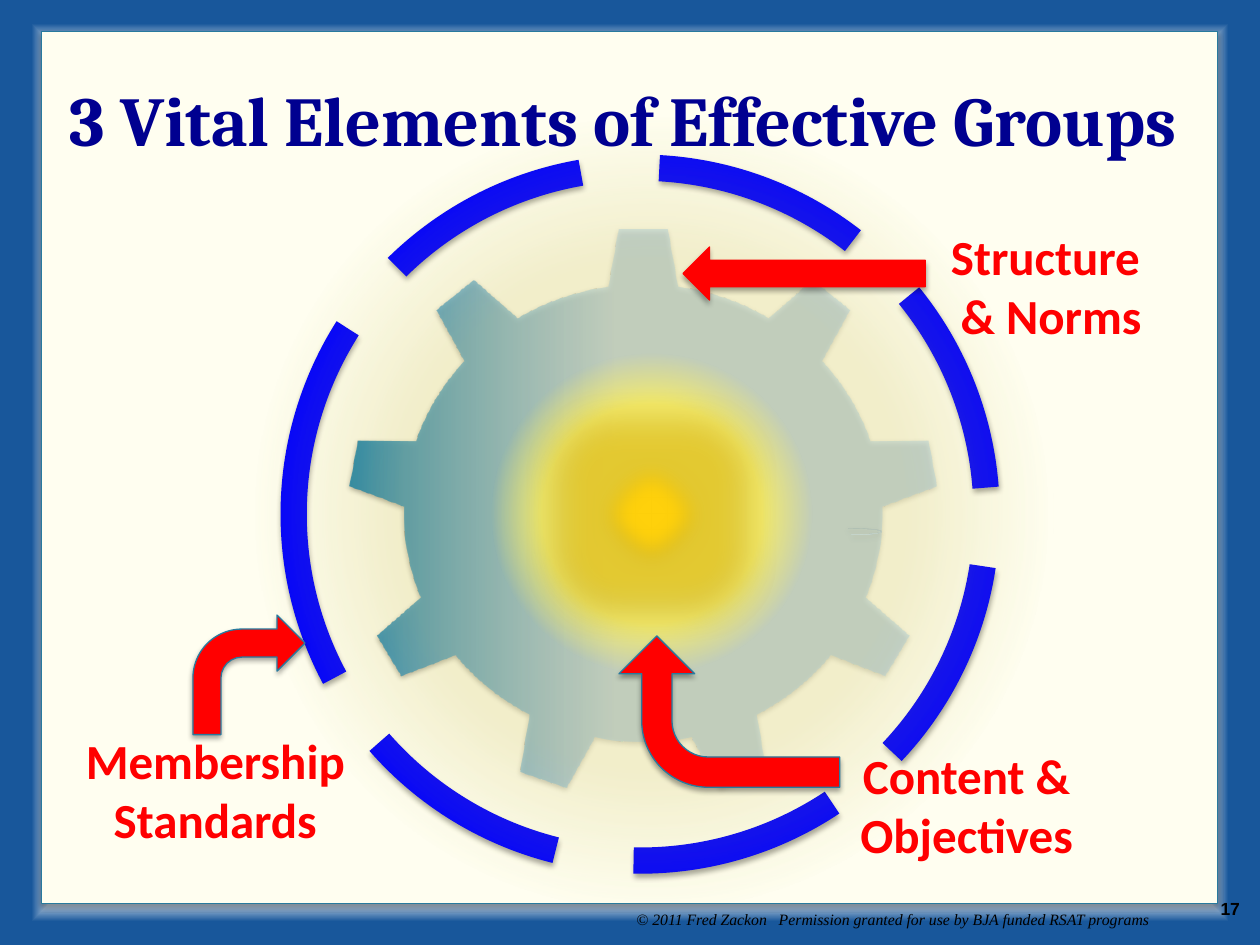
import pptx
import pptx.util
import pptx.dml.color
import pptx.enum.dml
import pptx.enum.shapes
import pptx.enum.text
import pptx.oxml
import pptx.oxml.ns
from pptx.util import Cm

KIND = pptx.enum.shapes.MSO_SHAPE
ALIGN = pptx.enum.text.PP_ALIGN
ANCHOR = pptx.enum.text.MSO_ANCHOR

THEME = {
    "panel": "FFFEF0", "edge": "287A9E", "ring": "0000FF", "accent": "FF0000",
    "title": "000090", "ink": "000000", "sun": "FFF25A", "core": "FFD10B",
    "haze": "C3B648", "frame": "18579B", "white": "FFFFFF",
    "gear_dark": "1B83B0", "gear_light": "A0CFF4",
    "swirl_dark": "A8C0D1", "swirl_light": "CBE3F7",
    "title_type": ("Cambria", 40), "label_type": ("Calibri", 28),
    "footer_type": ("Times New Roman", 9), "number_type": ("Arial", 10),
}
# Gradient stops: position %, colour, opacity %
FRAME_STOPS = [(0, "white", 100), (90, "white", 100), (95, "frame", 100), (100, "frame", 100)]
GEAR_STOPS = [(0, "gear_dark", 100), (45, "gear_light", 43), (100, "gear_light", 43)]
SWIRL_STOPS = [(0, "swirl_dark", 100), (100, "swirl_light", 100)]
# A round gradient reaches the corners, so an oval's rim lies at about 70 %
HAZE_STOPS = [(0, "haze", 22), (45, "haze", 22), (70, "haze", 0), (100, "haze", 0)]
SUN_STOPS = [(0, "sun", 85), (41, "sun", 80), (60, "sun", 0), (100, "sun", 0)]

TITLE = "3 Vital Elements of Effective Groups"
FOOTER = "© 2011 Fred Zackon   Permission granted for use by BJA funded RSAT programs"
PAGE_NUMBER = "17"

# Each element: label, label frame, arrow kind, arrow frame, rotation, adjustments, line
ELEMENTS = [
    ("Membership \nStandards", (1.37, 14.61, 5.94, 2.64),
     KIND.BENT_ARROW, (3.89, 12.4, 2.26, 2.41), 0, (), "edge"),
    ("Content &\nObjectives", (16.08, 14.91, 6.81, 2.64),
     KIND.BENT_ARROW, (13.18, 12.12, 3.05, 4.45), 270, (0.2, 0.25, 0.25, 0.44), "edge"),
    ("Structure\n & Norms", (17.58, 4.45, 6.99, 2.64),
     KIND.LEFT_ARROW, (13.77, 4.98, 4.88, 1.07), 0, (), "accent"),
]


def rgb(name):
    return pptx.dml.color.RGBColor.from_string(THEME[name])


def xml(text):
    return pptx.oxml.parse_xml(text.replace(">", f" {pptx.oxml.ns.nsdecls('a')}>", 1))


def gradient(stops, direction):
    marks = "".join(
        f'<a:gs pos="{place * 1000}"><a:srgbClr val="{THEME[name]}">'
        f'<a:alpha val="{opacity * 1000}"/></a:srgbClr></a:gs>'
        for place, name, opacity in stops)
    return xml(f'<a:gradFill rotWithShape="1"><a:gsLst>{marks}</a:gsLst>{direction}</a:gradFill>')


def linear(angle):
    return f'<a:lin ang="{angle * 60000}" scaled="0"/>'


def centred(outline):
    return (f'<a:path path="{outline}">'
            '<a:fillToRect l="50000" t="50000" r="50000" b="50000"/></a:path>')


def add_effects(shape, glow=None, soft=0):
    """Give a soft drop shadow, plus a glow (colour, points, opacity) and soft edge."""
    parts = ""
    if glow:
        name, size, opacity = glow
        parts += (f'<a:glow rad="{pptx.util.Pt(size)}"><a:srgbClr val="{THEME[name]}">'
                  f'<a:alpha val="{opacity * 1000}"/></a:srgbClr></a:glow>')
    parts += (f'<a:outerShdw blurRad="{pptx.util.Pt(3.1)}" dist="{pptx.util.Pt(1.8)}" '
              'dir="5400000" rotWithShape="0"><a:srgbClr val="000000">'
              '<a:alpha val="35000"/></a:srgbClr></a:outerShdw>')
    if soft:
        parts += f'<a:softEdge rad="{pptx.util.Pt(soft)}"/>'
    shape.element.spPr.append(xml(f"<a:effectLst>{parts}</a:effectLst>"))


def add_figure(page, kind, frame, fill=None, line=None, width=0.75, stops=None,
               direction=None, rotation=0, adjustments=(), shadow=True, **effects):
    shape = page.shapes.add_shape(kind, *map(Cm, frame))
    shape.rotation = rotation
    for index, value in enumerate(adjustments):
        shape.adjustments[index] = value
    if stops:
        shape.element.spPr.append(gradient(stops, direction))
    elif fill:
        shape.fill.solid()
        shape.fill.fore_color.rgb = rgb(fill)
    else:
        shape.fill.background()
    if line:
        shape.line.color.rgb = rgb(line)
        shape.line.width = pptx.util.Pt(width)
    else:
        shape.line.fill.background()
    if shadow:
        add_effects(shape, **effects)
    else:
        shape.shadow.inherit = False
    return shape


def write(box, text, style, colour, bold=True, italic=False, wrap=True):
    frame = box.text_frame
    frame.text = text
    frame.word_wrap = wrap
    for para in frame.paragraphs:
        para.alignment = ALIGN.CENTER
        for span in para.runs:
            span.font.name, size = THEME[style]
            span.font.size = pptx.util.Pt(size)
            span.font.bold, span.font.italic = bold, italic
            span.font.color.rgb = rgb(colour)


def add_text(page, frame, *args, **options):
    write(page.shapes.add_textbox(*map(Cm, frame)), *args, **options)


def paint_background(page):
    page.background.fill.solid()
    solid = page.element.find(".//" + pptx.oxml.ns.qn("a:solidFill"))
    solid.getparent().replace(solid, gradient(FRAME_STOPS, centred("rect")))


def place_title(page):
    """Format the title and bring it in front of what is drawn so far."""
    title = page.shapes.title
    title.left, title.top, title.width, title.height = map(Cm, (0.43, 1.27, 24.26, 2.24))
    write(title, TITLE, "title_type", "title")
    frame = title.text_frame
    frame.vertical_anchor = ANCHOR.MIDDLE
    frame.margin_left = frame.margin_right = frame.margin_top = frame.margin_bottom = Cm(0.25)
    title.element.getparent().append(title.element)


def main():
    deck = pptx.Presentation()
    deck.slide_width, deck.slide_height = Cm(25.4), Cm(19.05)
    page = deck.slides.add_slide(deck.slide_layouts[5])
    paint_background(page)

    add_text(page, (11.86, 18.21, 12.27, 0.64), FOOTER, "footer_type", "ink",
             bold=False, italic=True)
    add_text(page, (24.33, 17.98, 0.94, 0.69), PAGE_NUMBER, "number_type", "ink", wrap=False)

    add_figure(page, KIND.RECTANGLE, (0.84, 0.64, 23.7, 17.58), "panel", "edge")
    ring = add_figure(page, KIND.OVAL, (5.92, 3.38, 13.97, 13.97), line="ring", width=15,
                      rotation=357.7)
    ring.line.dash_style = pptx.enum.dml.MSO_LINE.LONG_DASH
    add_figure(page, KIND.GEAR_9, (6.99, 4.57, 11.94, 11.53), stops=GEAR_STOPS,
               direction=linear(0))
    add_figure(page, KIND.LEFT_CIRCULAR_ARROW, (16.51, 10.64, 1.27, 0.15), stops=SWIRL_STOPS,
               direction=linear(270), rotation=180,
               adjustments=(0.05, 3.13, 31.65, 151.91, 0.06))
    add_figure(page, KIND.OVAL, (5.03, 2.26, 16.2, 16.2), stops=HAZE_STOPS,
               direction=centred("circle"), shadow=False)
    add_figure(page, KIND.OVAL, (9.32, 6.55, 7.62, 7.62), stops=SUN_STOPS,
               direction=centred("circle"), shadow=False)
    place_title(page)
    add_figure(page, KIND.OVAL, (11.86, 9.09, 2.54, 2.54), "core",
               glow=("core", 40, 50), soft=12)

    for label, place, kind, frame, rotation, adjustments, line in ELEMENTS:
        add_text(page, place, label, "label_type", "accent")
        add_figure(page, kind, frame, "accent", line, rotation=rotation,
                   adjustments=adjustments)
    deck.save("out.pptx")


if __name__ == "__main__":
    main()
